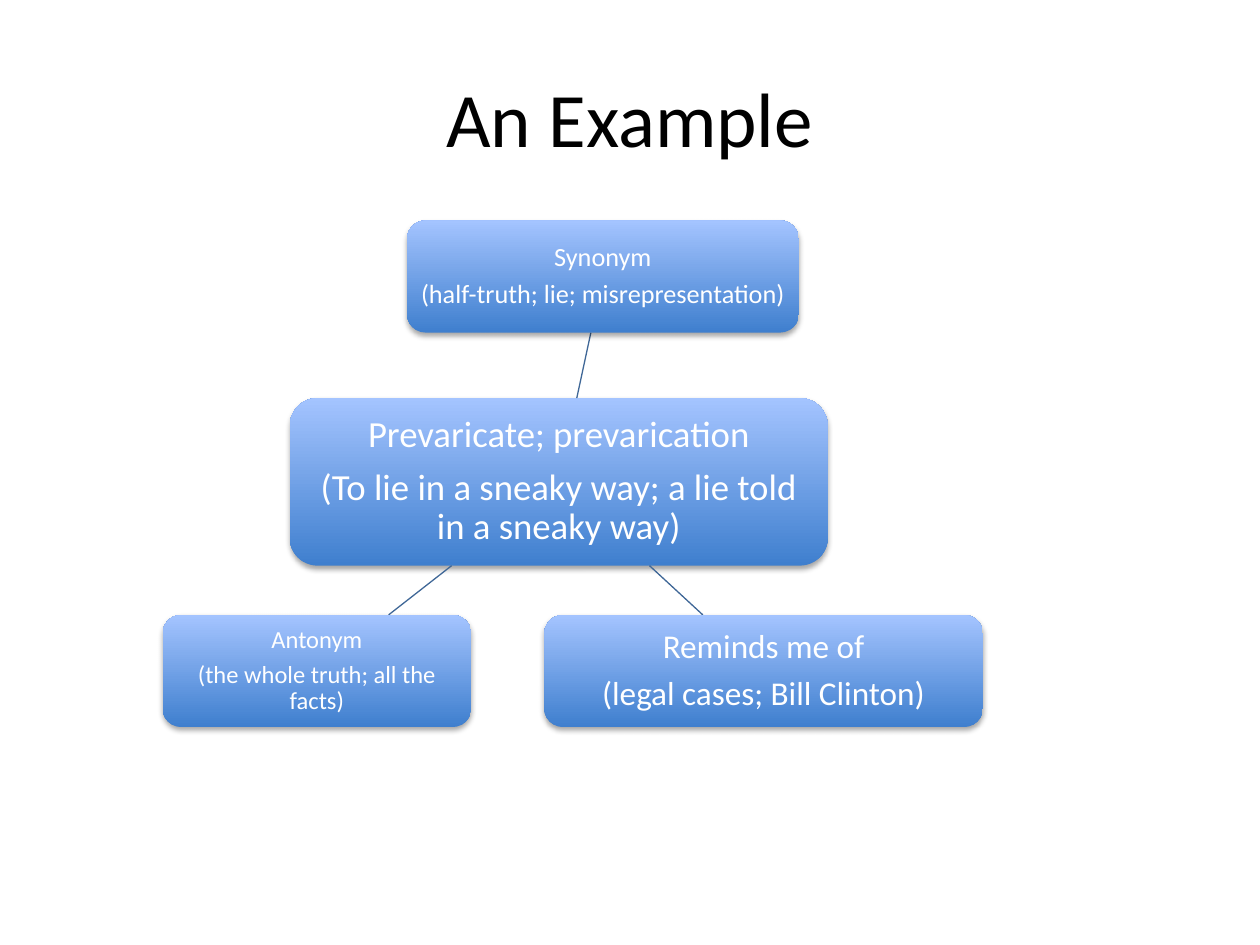
from lxml.etree import SubElement
from pptx import Presentation
from pptx.dml.color import RGBColor
from pptx.enum.shapes import MSO_CONNECTOR, MSO_SHAPE
from pptx.enum.text import MSO_ANCHOR, PP_ALIGN
from pptx.oxml.ns import qn
from pptx.util import Inches, Pt

TITLE = "An Example"
TITLE_CELL = (5, 4, 90, 16.67)
# Cells are left, top, width and height in percent of the slide.
WORD = {
    "lines": ("Prevaricate; prevarication",
              "(To lie in a sneaky way; a lie told in a sneaky way)"),
    "cell": (23, 42.13, 42.7, 17.73), "size": 21, "inset": 0.06,
}
RELATED = [
    {"lines": ("Synonym", "(half-truth; lie; misrepresentation)"),
     "cell": (32.3, 23.33, 31.1, 11.87), "size": 15, "inset": 0.04},
    {"lines": ("Reminds me of", "(legal cases; Bill Clinton)"),
     "cell": (43.2, 65.07, 34.8, 11.87), "size": 19, "inset": 0.05},
    {"lines": ("Antonym", "(the whole truth; all the facts)"),
     "cell": (12.9, 65.07, 24.5, 11.87), "size": 14, "inset": 0.04},
]
FONT = "Calibri"
BLACK = RGBColor(0x00, 0x00, 0x00)
WHITE = RGBColor(0xFF, 0xFF, 0xFF)
DEEP_BLUE = RGBColor(0x3F, 0x7F, 0xCE)
PALE_BLUE = RGBColor(0xA4, 0xC4, 0xFF)
LINK_BLUE = RGBColor(0x3F, 0x67, 0x97)
SLIDE_WIDTH, SLIDE_HEIGHT = Inches(10), Inches(7.5)


def place(cell):
    left, top, width, height = cell
    return [round(share * side / 100) for share, side in
            ((left, SLIDE_WIDTH), (top, SLIDE_HEIGHT),
             (width, SLIDE_WIDTH), (height, SLIDE_HEIGHT))]


def write(paragraph, words, size, color):
    paragraph.alignment = PP_ALIGN.CENTER
    run = paragraph.add_run()
    run.text = words
    run.font.name, run.font.size = FONT, Pt(size)
    run.font.color.rgb = color


def add_shadow(box):
    box.shadow.inherit = False
    effects = box.element.spPr.find(qn("a:effectLst"))
    shadow = SubElement(effects, qn("a:outerShdw"), blurRad=str(Pt(3.15)),
                        dist=str(Pt(1.8)), dir="5400000", rotWithShape="0")
    tint = SubElement(shadow, qn("a:srgbClr"), val="000000")
    SubElement(tint, qn("a:alpha"), val="35000")


def add_box(slide, topic):
    box = slide.shapes.add_shape(MSO_SHAPE.ROUNDED_RECTANGLE, *place(topic["cell"]))
    box.fill.gradient()
    box.fill.gradient_angle = 90
    for stop, color in zip(box.fill.gradient_stops, (DEEP_BLUE, PALE_BLUE)):
        stop.color.rgb = color
    box.line.fill.background()
    add_shadow(box)
    frame = box.text_frame
    frame.word_wrap = True
    frame.vertical_anchor = MSO_ANCHOR.MIDDLE
    frame.margin_left = frame.margin_right = Inches(topic["inset"])
    frame.margin_top = frame.margin_bottom = Inches(topic["inset"])
    for index, words in enumerate(topic["lines"]):
        paragraph = frame.add_paragraph() if index else frame.paragraphs[0]
        paragraph.line_spacing = 0.9
        paragraph.space_after = Pt(round(0.35 * topic["size"], 1))
        write(paragraph, words, topic["size"], WHITE)


def add_link(slide, start_cell, end_cell):
    """Draw the part of the centre-to-centre line between two boxes."""
    (x1, y1, w1, h1), (x2, y2, w2, h2) = place(start_cell), place(end_cell)
    start_x, start_y = x1 + w1 / 2, y1 + h1 / 2
    run, rise = x2 + w2 / 2 - start_x, y2 + h2 / 2 - start_y
    shares = (h1 / 2 / abs(rise), 1 - h2 / 2 / abs(rise))
    ends = [round(value) for share in shares
            for value in (start_x + run * share, start_y + rise * share)]
    link = slide.shapes.add_connector(MSO_CONNECTOR.STRAIGHT, *ends)
    link.line.color.rgb = LINK_BLUE
    link.line.width = Pt(0.75)
    SubElement(link.element.spPr, qn("a:effectLst"))


def main():
    deck = Presentation()
    deck.slide_width, deck.slide_height = SLIDE_WIDTH, SLIDE_HEIGHT
    slide = deck.slides.add_slide(deck.slide_layouts[5])
    title = slide.shapes.title
    title.left, title.top, title.width, title.height = place(TITLE_CELL)
    title.text_frame.vertical_anchor = MSO_ANCHOR.MIDDLE
    write(title.text_frame.paragraphs[0], TITLE, 44, BLACK)
    add_box(slide, WORD)
    for topic in RELATED:
        add_link(slide, WORD["cell"], topic["cell"])
        add_box(slide, topic)
    deck.save("out.pptx")


if __name__ == "__main__":
    main()
